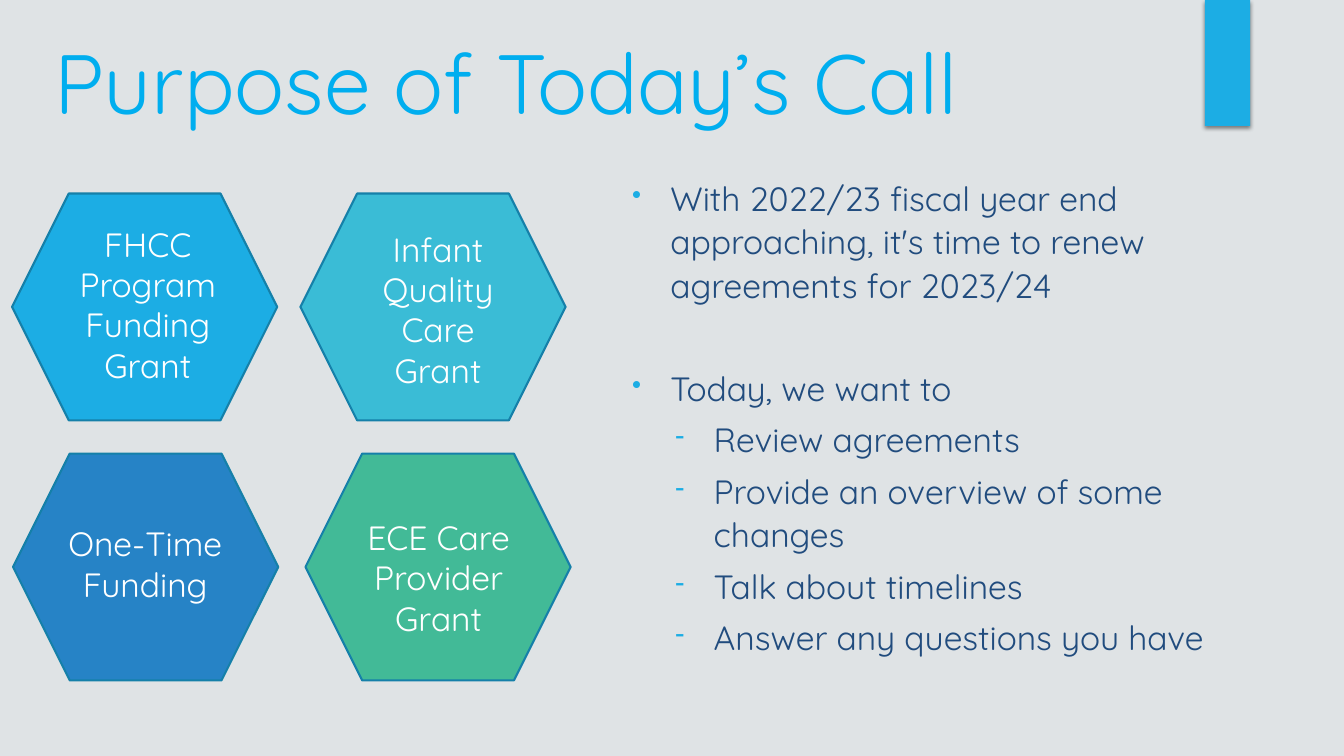
from dataclasses import dataclass

from lxml.etree import SubElement
from pptx import Presentation
from pptx.dml.color import RGBColor
from pptx.enum.shapes import MSO_SHAPE
from pptx.enum.text import MSO_ANCHOR, PP_ALIGN
from pptx.oxml.ns import qn
from pptx.shapes.autoshape import Shape
from pptx.slide import Slide
from pptx.util import Inches, Pt

BACKGROUND = RGBColor(0xDF, 0xE3, 0xE5)
ACCENT = RGBColor(0x1C, 0xAD, 0xE4)
TITLE_BLUE = RGBColor(0x00, 0xAE, 0xEF)
BODY_BLUE = RGBColor(0x21, 0x4C, 0x7E)
OUTLINE = RGBColor(0x15, 0x80, 0xA9)
TEAL = RGBColor(0x3A, 0xBC, 0xD6)
BLUE = RGBColor(0x26, 0x83, 0xC6)
GREEN = RGBColor(0x42, 0xBA, 0x97)
WHITE = RGBColor(0xFF, 0xFF, 0xFF)

FONT = "Quicksand"
HEXAGON_SIZE = (2.63, 2.25)

Area = tuple[float, float, float, float]


@dataclass(frozen=True)
class Grant:
    label: str
    color: RGBColor
    corner: tuple[float, float]
    label_area: Area


@dataclass(frozen=True)
class Bullet:
    text: str
    mark: str = "-"
    indent: float = 1.13
    space_after: float = 6


GRANTS = [
    Grant("FHCC Program Funding Grant", ACCENT, (0.12, 1.92), (0.67, 2.17, 1.59, 1.72)),
    Grant("Infant Quality Care Grant", TEAL, (2.98, 1.92), (3.51, 2.22, 1.67, 1.72)),
    Grant("One-Time Funding", BLUE, (0.13, 4.5), (0.5, 5.14, 1.88, 0.91)),
    Grant("ECE Care Provider Grant", GREEN, (3.03, 4.5), (3.41, 5.08, 1.88, 1.31)),
]

BULLETS = [
    Bullet(
        "With 2022/23 fiscal year end approaching, it's time to renew agreements for 2023/24",
        "•", 0.7, space_after=43,
    ),
    Bullet("Today, we want to", "•", 0.7),
    Bullet("Review agreements"),
    Bullet("Provide an overview of some changes"),
    Bullet("Talk about timelines"),
    Bullet("Answer any questions you have"),
]


def add_filled(page: Slide, kind: MSO_SHAPE, area: Area, color: RGBColor) -> Shape:
    shape = page.shapes.add_shape(kind, *map(Inches, area))
    shape.shadow.inherit = False
    shape.fill.solid()
    shape.fill.fore_color.rgb = color
    shape.line.fill.background()
    return shape


def add_text_box(page: Slide, area: Area, anchor: MSO_ANCHOR = MSO_ANCHOR.TOP) -> Shape:
    box = page.shapes.add_textbox(*map(Inches, area))
    box.text_frame.word_wrap = True
    box.text_frame.vertical_anchor = anchor
    return box


def write(para, text: str, size: float, color: RGBColor, **layout) -> None:
    """Add one span to a paragraph and apply its paragraph format values."""
    for name, value in layout.items():
        setattr(para, name, value)
    span = para.add_run()
    span.text = text
    for name, value in {"name": FONT, "size": Pt(size)}.items():
        setattr(span.font, name, value)
    span.font.color.rgb = color


def set_bullet(para, bullet: Bullet) -> None:
    properties = para._p.get_or_add_pPr()
    properties.set("marL", str(Inches(bullet.indent)))
    properties.set("indent", str(Inches(-0.38)))
    color = SubElement(properties, qn("a:buClr"))
    SubElement(color, qn("a:srgbClr"), val=str(ACCENT))
    SubElement(properties, qn("a:buSzPct"), val="80000")
    SubElement(properties, qn("a:buChar"), char=bullet.mark)


def add_drop_shadow(shape: Shape) -> None:
    effects = shape._element.spPr.find(qn("a:effectLst"))
    shadow = SubElement(
        effects, qn("a:outerShdw"), blurRad=str(Pt(3)), dist=str(Pt(2)),
        dir="5400000", rotWithShape="0",
    )
    color = SubElement(shadow, qn("a:srgbClr"), val="000000")
    SubElement(color, qn("a:alpha"), val="45000")


def add_grant(page: Slide, grant: Grant) -> None:
    hexagon = add_filled(page, MSO_SHAPE.HEXAGON, grant.corner + HEXAGON_SIZE, grant.color)
    hexagon.line.color.rgb = OUTLINE
    hexagon.line.width = Pt(1.5)
    box = add_text_box(page, grant.label_area)
    write(box.text_frame.paragraphs[0], grant.label, 24, WHITE, alignment=PP_ALIGN.CENTER)


def add_bullets(page: Slide) -> None:
    frame = add_text_box(page, (5.85, 1.69, 6.62, 5.48)).text_frame
    for index, bullet in enumerate(BULLETS):
        para = frame.add_paragraph() if index else frame.paragraphs[0]
        set_bullet(para, bullet)
        write(para, bullet.text, 24, BODY_BLUE,
              line_spacing=1.07, space_after=Pt(bullet.space_after))


def main() -> None:
    deck = Presentation()
    deck.slide_width, deck.slide_height = Inches(13.33), Inches(7.5)
    page = deck.slides.add_slide(deck.slide_layouts[6])
    page.background.fill.solid()
    page.background.fill.fore_color.rgb = BACKGROUND

    add_drop_shadow(add_filled(page, MSO_SHAPE.RECTANGLE, (11.95, 0, 0.45, 1.25), ACCENT))
    title = add_text_box(page, (0.44, 0.42, 10.42, 0.77), MSO_ANCHOR.MIDDLE)
    write(title.text_frame.paragraphs[0], "Purpose of Today’s Call", 60, TITLE_BLUE)
    add_bullets(page)
    for grant in GRANTS:
        add_grant(page, grant)

    deck.save("out.pptx")


if __name__ == "__main__":
    main()
